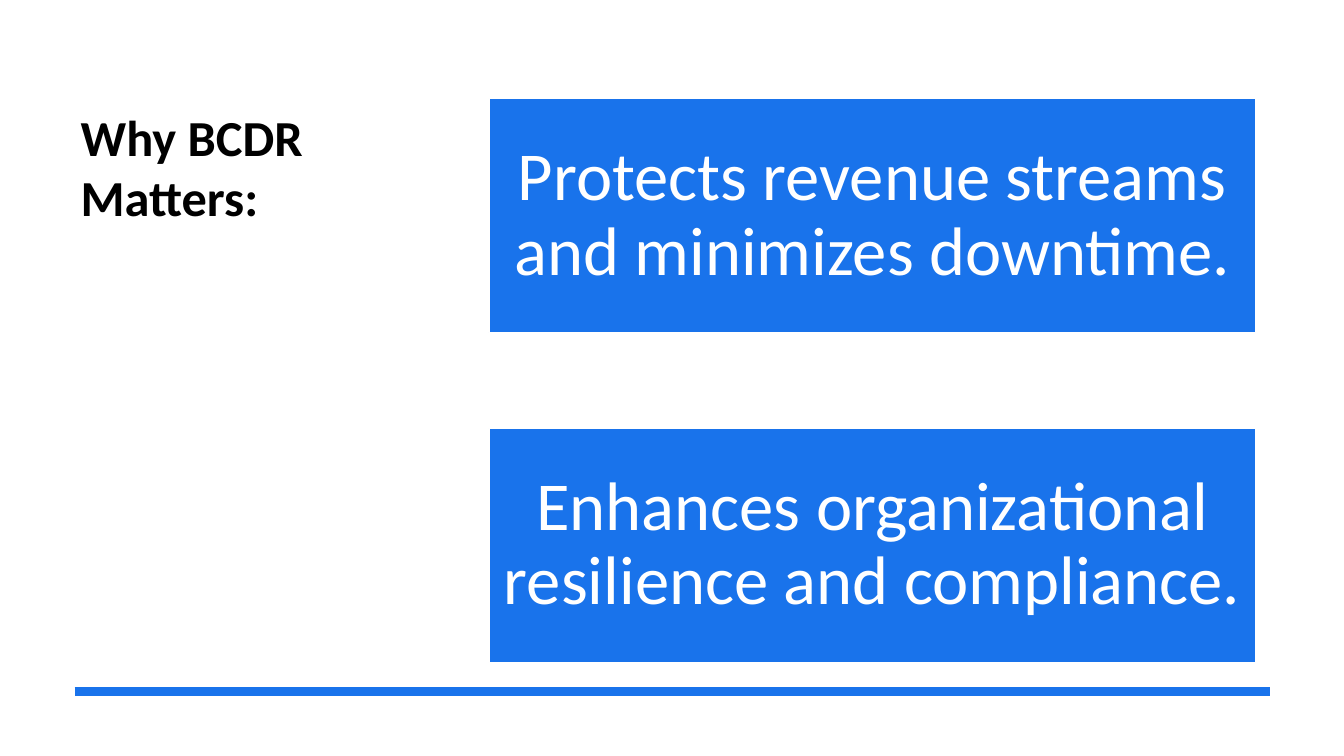
from dataclasses import dataclass

from lxml.etree import SubElement
from pptx import Presentation
from pptx.dml.color import RGBColor
from pptx.enum.shapes import MSO_CONNECTOR as Connector, MSO_SHAPE as Shape
from pptx.enum.text import MSO_ANCHOR as Anchor, MSO_AUTO_SIZE as AutoSize, PP_ALIGN as Align
from pptx.oxml.ns import qn
from pptx.util import Inches, Pt


@dataclass(frozen=True)
class Theme:
    """Colours, font and type sizes of the deck."""
    accent: RGBColor = RGBColor(0x19, 0x73, 0xEB)
    ink: RGBColor = RGBColor(0, 0, 0)
    paper: RGBColor = RGBColor(0xFF, 0xFF, 0xFF)
    font: str = "Calibri"
    heading_size: Pt = Pt(36)
    benefit_size: Pt = Pt(49)
    rule_width: Pt = Pt(6)
    border_width: Pt = Pt(1)


THEME = Theme()
BENEFITS = (
    "Protects revenue streams and minimizes downtime.",
    "Enhances organizational resilience and compliance.",
)


def apply(target, values):
    """Set each attribute of target from a dict of format values."""
    for attribute, value in values.items():
        setattr(target, attribute, value)


def write(frame, text, frame_format, paragraph_format, font_format, color):
    """Fill a text frame with one formatted paragraph."""
    apply(frame, {"word_wrap": True, "auto_size": AutoSize.NONE, **frame_format})
    paragraph = frame.paragraphs[0]
    apply(paragraph, paragraph_format)
    run = paragraph.add_run()
    run.text = text
    apply(run.font, {"name": THEME.font, **font_format})
    run.font.color.rgb = color


def add_heading(slide, text, left, top, width, height):
    """Place the title placeholder in the given box."""
    heading = slide.shapes.title
    apply(heading, {"left": left, "top": top, "width": width, "height": height})
    write(heading.text_frame, text, {"vertical_anchor": Anchor.TOP},
          {"alignment": Align.LEFT, "line_spacing": 1.0},
          {"size": THEME.heading_size, "bold": True}, THEME.ink)


def add_rule(slide, left, top, width):
    """Draw the horizontal accent rule."""
    rule = slide.shapes.add_connector(Connector.STRAIGHT, left, top, left + width, top)
    rule.line.color.rgb = THEME.accent
    rule.line.width = THEME.rule_width
    SubElement(rule.element.spPr, qn("a:effectLst"))


def add_benefit(slide, text, left, top, width, height):
    """Draw one benefit panel with its centred statement."""
    panel = slide.shapes.add_shape(Shape.RECTANGLE, left, top, width, height)
    panel.shadow.inherit = False
    panel.fill.solid()
    panel.fill.fore_color.rgb = THEME.accent
    panel.line.color.rgb = THEME.paper
    panel.line.width = THEME.border_width
    margins = {f"margin_{side}": Inches(0.03) for side in ("left", "top", "right", "bottom")}
    write(panel.text_frame, text, {"vertical_anchor": Anchor.MIDDLE, **margins},
          {"alignment": Align.CENTER, "line_spacing": 0.9},
          {"size": THEME.benefit_size}, THEME.paper)


def add_benefits(slide, texts, left, top, width, height, gap):
    """Stack equal benefit panels, separated by gap, inside the given box."""
    panel_height = (height - gap * (len(texts) - 1)) // len(texts)
    for index, text in enumerate(texts):
        add_benefit(slide, text, left, top + index * (panel_height + gap), width, panel_height)


def main():
    """Build and save the slide."""
    deck = Presentation()
    apply(deck, {"slide_width": Inches(13.33), "slide_height": Inches(7.5)})
    slide = deck.slides.add_slide(deck.slide_layouts[5])
    add_heading(slide, "Why BCDR Matters:", Inches(0.7), Inches(1), Inches(3.28), Inches(4.55))
    add_rule(slide, Inches(0.74), Inches(6.86), Inches(11.86))
    add_benefits(slide, BENEFITS, Inches(4.85), Inches(0.98), Inches(7.6), Inches(5.59), Inches(0.95))
    deck.save("out.pptx")


if __name__ == "__main__":
    main()
